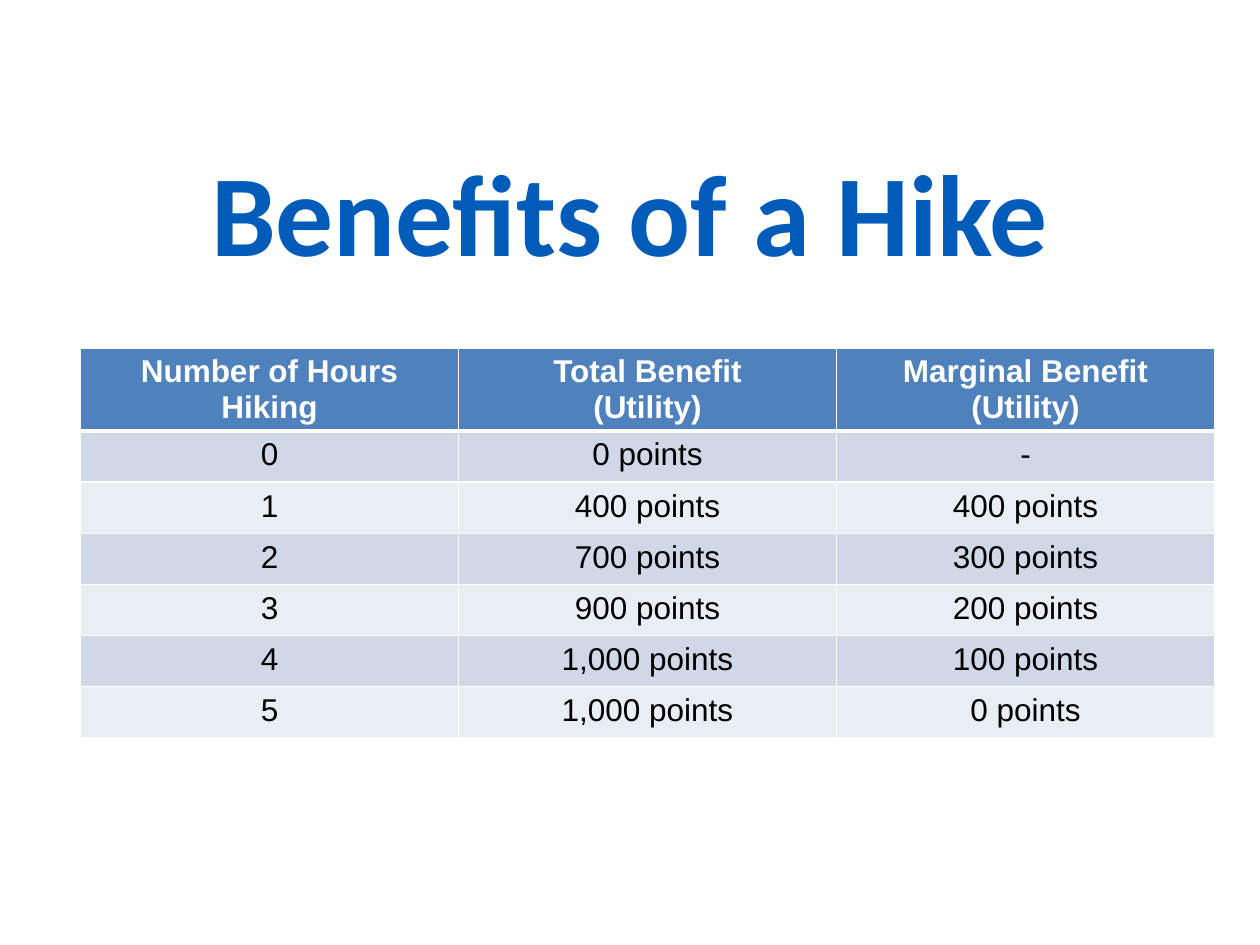
from lxml import etree
from pptx import Presentation
from pptx.dml.color import RGBColor
from pptx.enum.text import MSO_ANCHOR, PP_ALIGN
from pptx.oxml.ns import qn
from pptx.util import Pt

CENTER = PP_ALIGN.CENTER
TOP, MIDDLE = MSO_ANCHOR.TOP, MSO_ANCHOR.MIDDLE
TITLE_ONLY = 5

COLORS = {
    "title": "005CB8",
    "header": "4F81BD",
    "band_dark": "D0D8E8",
    "band_light": "E9EDF4",
    "white": "FFFFFF",
    "black": "000000",
}

BENEFITS = [
    ("Number of Hours Hiking", "Total Benefit\n(Utility)", "Marginal Benefit\n(Utility)"),
    ("0", "0 points", "-"),
    ("1", "400 points", "400 points"),
    ("2", "700 points", "300 points"),
    ("3", "900 points", "200 points"),
    ("4", "1,000 points", "100 points"),
    ("5", "1,000 points", "0 points"),
]


def write(tf, text, font="Arial", size=18, color="black", bold=False, spacing=None):
    """Fill a text frame with one centred paragraph per line of text."""
    for i, line in enumerate(text.split("\n")):
        p = tf.paragraphs[0] if i == 0 else tf.add_paragraph()
        p.alignment = CENTER
        if spacing:
            p.line_spacing = Pt(spacing)
        r = p.add_run()
        r.text = line
        r.font.name = font
        r.font.size = Pt(size)
        r.font.bold = bold
        r.font.color.rgb = RGBColor.from_string(COLORS[color])


def set_borders(cell, color, **widths):
    """Draw cell borders; widths maps L, R, T, B to points."""
    tc_pr = cell._tc.get_or_add_tcPr()
    for side in "LRTB":
        ln = etree.SubElement(tc_pr, qn(f"a:ln{side}"), w=str(Pt(widths[side])))
        fill = etree.SubElement(ln, qn("a:solidFill"))
        etree.SubElement(fill, qn("a:srgbClr"), val=COLORS[color])


class SlideBuilder:
    def __init__(self, prs):
        self.slide = prs.slides.add_slide(prs.slide_layouts[TITLE_ONLY])

    def title(self, text, left, top, width, height):
        sp = self.slide.shapes.title
        sp.left, sp.top, sp.width, sp.height = Pt(left), Pt(top), Pt(width), Pt(height)
        tf = sp.text_frame
        tf.word_wrap = True
        tf.vertical_anchor = MIDDLE
        write(tf, text, font="Calibri", size=66, color="title", bold=True, spacing=57)

    def table(self, rows, left, top, col_width, row_height):
        n_rows, n_cols = len(rows), len(rows[0])
        table = self.slide.shapes.add_table(
            n_rows, n_cols, Pt(left), Pt(top),
            Pt(col_width * n_cols), Pt(row_height * n_rows)).table
        table.horz_banding = False
        for col in table.columns:
            col.width = Pt(col_width)
        for i, row in enumerate(rows):
            table.rows[i].height = Pt(row_height)
            for j, text in enumerate(row):
                self.cell(table.cell(i, j), text, i)

    def cell(self, cell, text, row):
        header = row == 0
        band = "header" if header else "band_dark" if row % 2 else "band_light"
        set_borders(cell, "white", L=1, R=1, T=3 if row == 1 else 1, B=3 if header else 1)
        cell.fill.solid()
        cell.fill.fore_color.rgb = RGBColor.from_string(COLORS[band])
        cell.vertical_anchor = TOP
        write(cell.text_frame, text, color="white" if header else "black", bold=header)


def main():
    prs = Presentation()
    prs.slide_width, prs.slide_height = Pt(720), Pt(540)
    s = SlideBuilder(prs)
    s.title("Benefits of a Hike", left=36, top=86.4, width=648, height=90)
    s.table(BENEFITS, left=46, top=198.8, col_width=216, row_height=29.2)
    prs.save("out.pptx")


if __name__ == "__main__":
    main()
